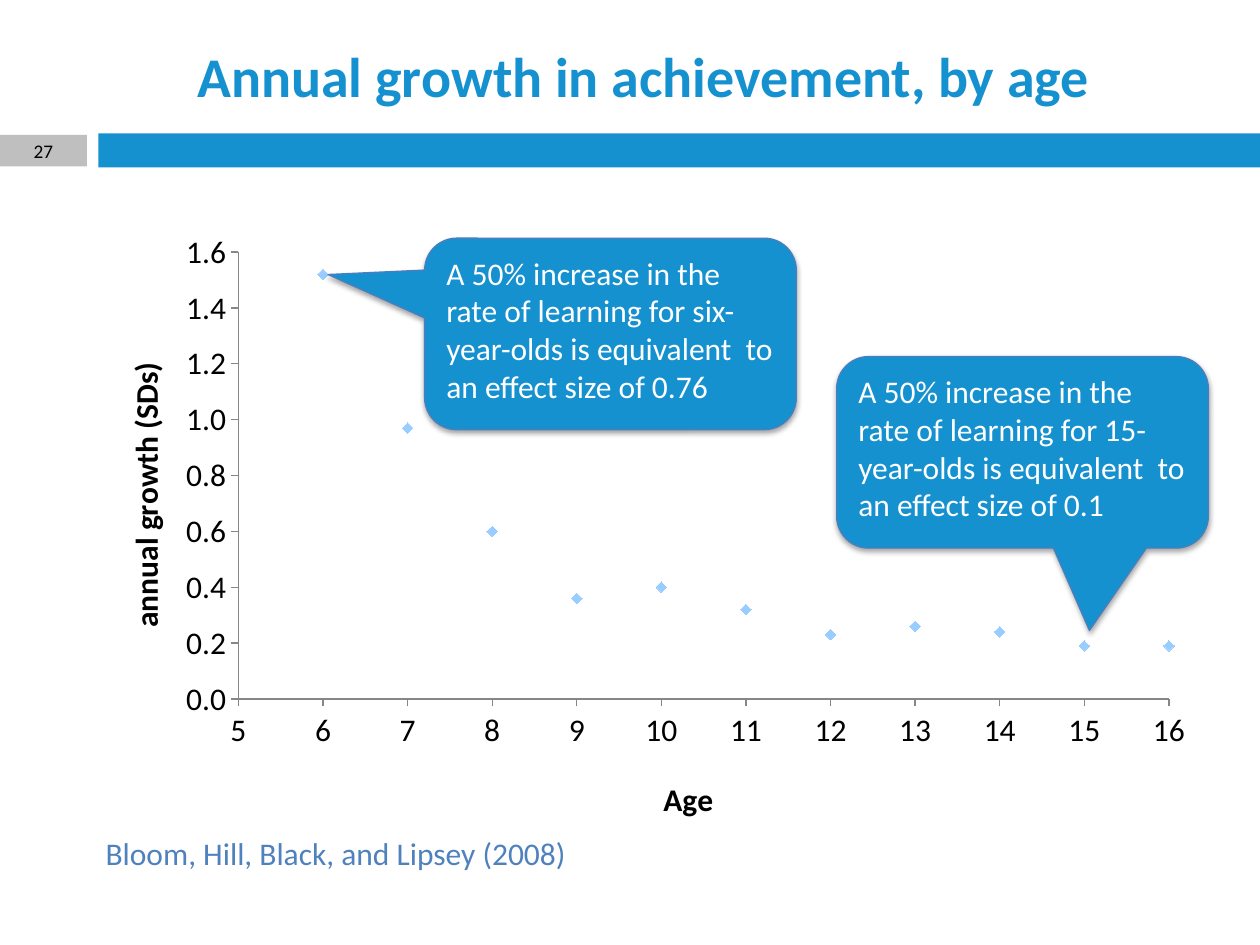
from dataclasses import dataclass

from lxml import etree
from pptx import Presentation
from pptx import util as u
from pptx.chart import data as chart_data
from pptx.dml.color import RGBColor
from pptx.enum import chart as chart_enum
from pptx.enum import shapes, text
from pptx.oxml import ns, parse_xml

BLUE = RGBColor(0x16, 0x91, 0xD0)
OUTLINE_BLUE = RGBColor(0x4B, 0x7E, 0xBC)
SOURCE_BLUE = RGBColor(0x4F, 0x81, 0xBD)
MARKER_BLUE = RGBColor(0x99, 0xCC, 0xFF)
GRAY = RGBColor(0xBF, 0xBF, 0xBF)
AXIS_GRAY = RGBColor(0x86, 0x86, 0x86)
BLACK = RGBColor(0, 0, 0)
WHITE = RGBColor(0xFF, 0xFF, 0xFF)
FONT = "Calibri"

SLIDE_WIDTH, SLIDE_HEIGHT = u.Inches(10), u.Inches(7.5)
COLUMNS, ROWS = 100, 75
GROWTH_BY_AGE = dict(enumerate(
    [1.52, 0.97, 0.6, 0.36, 0.4, 0.32, 0.23, 0.26, 0.24, 0.19, 0.19], start=6))


@dataclass(frozen=True)
class Area:
    """A box in columns and rows of the slide grid."""
    column: float
    row: float
    width: float
    height: float

    def lengths(self) -> tuple[int, int, int, int]:
        column, row = SLIDE_WIDTH / COLUMNS, SLIDE_HEIGHT / ROWS
        return (round(self.column * column), round(self.row * row),
                round(self.width * column), round(self.height * row))


@dataclass(frozen=True)
class Callout:
    column: float
    row: float
    age: str
    effect: str
    tip: tuple[float, float]

    def wording(self) -> str:
        return (f"A 50% increase in the rate of learning for {self.age}-year-olds "
                f"is equivalent  to an effect size of {self.effect}")


CALLOUTS = [
    Callout(33.7, 18.9, "six", "0.76", (-0.76, -0.31)),
    Callout(66.4, 28.3, "15", "0.1", (0.18, 0.93)),
]


def style_font(font, size: float, color: RGBColor, bold: bool = False) -> None:
    font.name, font.size, font.bold = FONT, u.Pt(size), bold
    font.color.rgb = color


def add_bar(slide, area: Area, color: RGBColor):
    bar = slide.shapes.add_shape(shapes.MSO_SHAPE.RECTANGLE, *area.lengths())
    bar.shadow.inherit = False
    bar.fill.solid()
    bar.fill.fore_color.rgb = color
    bar.line.fill.background()
    return bar


def write(shape, wording: str, size: float, color: RGBColor, bold: bool = False,
          align=text.PP_ALIGN.LEFT, anchor=text.MSO_ANCHOR.TOP) -> None:
    frame = shape.text_frame
    frame.text = wording
    frame.word_wrap = True
    frame.vertical_anchor = anchor
    paragraph = frame.paragraphs[0]
    paragraph.alignment = align
    style_font(paragraph.runs[0].font, size, color, bold)


def add_callout(slide, callout: Callout) -> None:
    area = Area(callout.column, callout.row, 29.5, 15.2)
    shape = slide.shapes.add_shape(
        shapes.MSO_SHAPE.ROUNDED_RECTANGULAR_CALLOUT, *area.lengths())
    shape.adjustments[0], shape.adjustments[1] = callout.tip
    shape.fill.solid()
    shape.fill.fore_color.rgb = BLUE
    shape.line.color.rgb = OUTLINE_BLUE
    shape.line.width = u.Pt(0.75)
    shape.shadow.inherit = False
    effects = shape.element.spPr.find(ns.qn("a:effectLst"))
    effects.append(parse_xml(
        f'<a:outerShdw {ns.nsdecls("a")} blurRad="{u.Pt(3.1)}" dist="{u.Pt(1.8)}" '
        'dir="5400000" rotWithShape="0"><a:srgbClr val="000000">'
        '<a:alpha val="35000"/></a:srgbClr></a:outerShdw>'))
    write(shape, callout.wording(), 18, WHITE)


def place(element, index: int, **shares: float) -> None:
    """Fix a chart part at shares of the chart's size."""
    for old in element.findall(ns.qn("c:layout")):
        element.remove(old)
    layout = etree.Element(ns.qn("c:layout"))
    manual = etree.SubElement(layout, ns.qn("c:manualLayout"))
    settings = {"xMode": "edge", "yMode": "edge", **shares}
    if "w" in shares:
        settings = {"layoutTarget": "inner", **settings}
    for name, value in settings.items():
        etree.SubElement(manual, ns.qn(f"c:{name}")).set("val", str(value))
    element.insert(index, layout)


def style_axis(axis, title: str, low: float, high: float, step: float,
               number_format: str, x: float, y: float) -> None:
    axis.minimum_scale, axis.maximum_scale, axis.major_unit = low, high, step
    axis.has_major_gridlines = False
    axis.major_tick_mark = chart_enum.XL_TICK_MARK.OUTSIDE
    axis.minor_tick_mark = chart_enum.XL_TICK_MARK.NONE
    axis.tick_labels.number_format = number_format
    axis.tick_labels.number_format_is_linked = False
    style_font(axis.tick_labels.font, 18, BLACK)
    axis.format.line.color.rgb = AXIS_GRAY
    axis.format.line.width = u.Pt(0.75)
    frame = axis.axis_title.text_frame
    frame.text = title
    style_font(frame.paragraphs[0].runs[0].font, 18, BLACK, bold=True)
    place(frame._txBody.getparent().getparent(), 1, x=x, y=y)


def add_growth_chart(slide, area: Area) -> None:
    data = chart_data.XyChartData()
    points = data.add_series("Series 1")
    for age, growth in GROWTH_BY_AGE.items():
        points.add_data_point(age, growth)
    chart = slide.shapes.add_chart(
        chart_enum.XL_CHART_TYPE.XY_SCATTER, *area.lengths(), data).chart
    chart.has_legend = False
    chart.has_title = False
    style_font(chart.font, 18, BLACK)
    plot = chart.plots[0]
    plot.vary_by_categories = False
    series = plot.series[0]
    series.format.line.fill.background()
    series.marker.style = chart_enum.XL_MARKER_STYLE.DIAMOND
    series.marker.size = 6
    series.marker.format.fill.solid()
    series.marker.format.fill.fore_color.rgb = MARKER_BLUE
    series.marker.format.line.fill.background()
    style_axis(chart.category_axis, "Age", 5, 16, 1, "General", 0.51, 0.89)
    style_axis(chart.value_axis, "annual growth (SDs)", 0, 1.6, 0.2,
               "#,##0.0", 0.03, 0.22)
    value_title = chart.value_axis.axis_title.text_frame
    value_title._txBody.find(ns.qn("a:bodyPr")).set("rot", "-5400000")
    place(chart.element.find(f".//{ns.qn('c:plotArea')}"), 0,
          x=0.137, y=0.051, w=0.828, h=0.721)


def main() -> None:
    presentation = Presentation()
    presentation.slide_width, presentation.slide_height = SLIDE_WIDTH, SLIDE_HEIGHT
    slide = presentation.slides.add_slide(presentation.slide_layouts[6])

    add_bar(slide, Area(7.8, 10.6, 92.2, 2.7), BLUE)
    number = add_bar(slide, Area(0, 10.7, 6.9, 2.5), GRAY)
    write(number, "27", 11, BLACK, align=text.PP_ALIGN.CENTER,
          anchor=text.MSO_ANCHOR.MIDDLE)
    title = slide.shapes.add_textbox(*Area(7.8, 2.6, 86.6, 6.8).lengths())
    write(title, "Annual growth in achievement, by age", 32, BLUE, bold=True,
          align=text.PP_ALIGN.CENTER, anchor=text.MSO_ANCHOR.MIDDLE)
    source = slide.shapes.add_textbox(*Area(7.4, 65.7, 68.3, 4).lengths())
    write(source, "Bloom, Hill, Black, and Lipsey (2008)", 18, SOURCE_BLUE)
    add_growth_chart(slide, Area(6.7, 17.5, 89.2, 49.2))
    for callout in CALLOUTS:
        add_callout(slide, callout)
    presentation.save("out.pptx")


if __name__ == "__main__":
    main()
